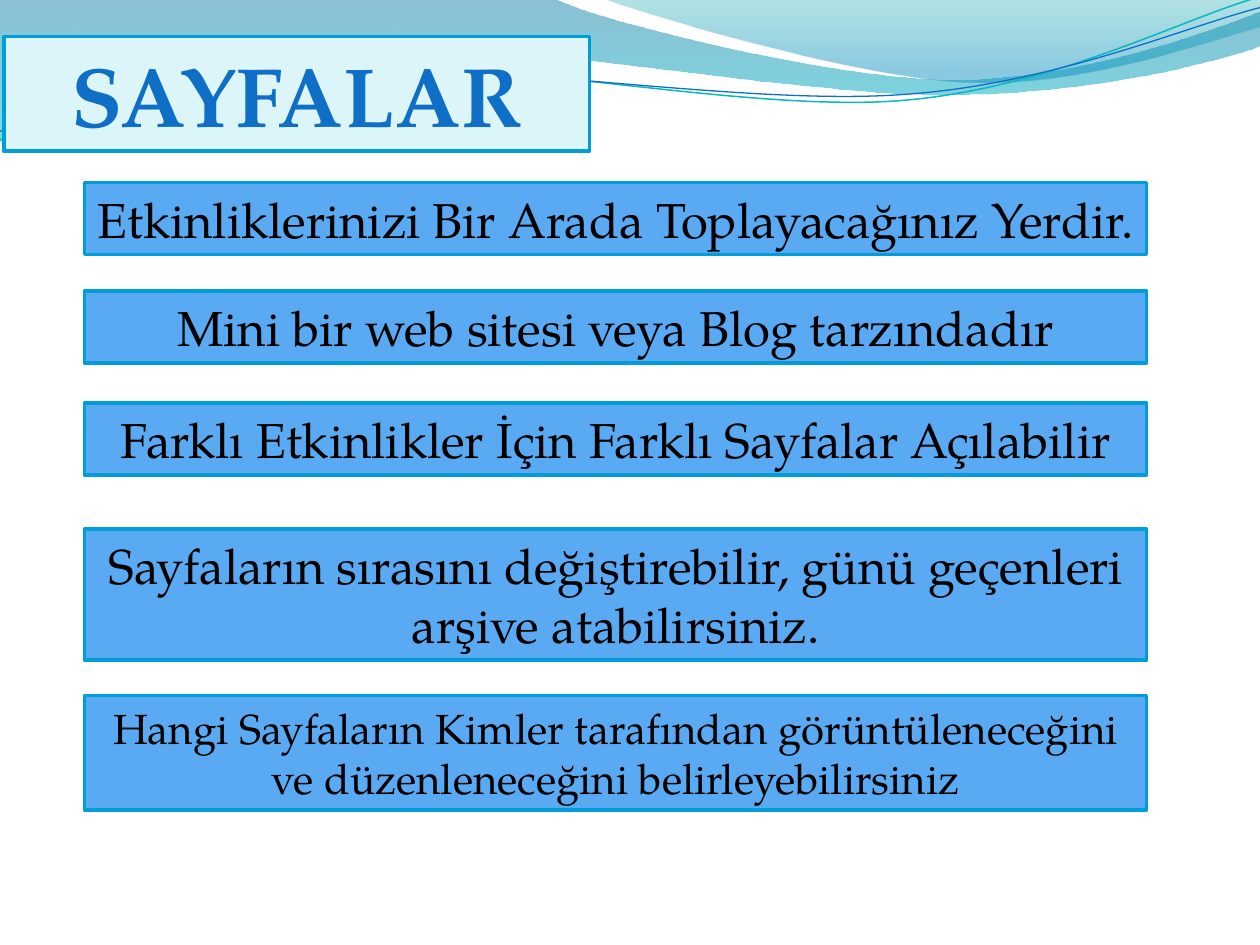
from math import cos, radians, sin

from lxml import etree
from pptx import Presentation
from pptx.dml.color import RGBColor
from pptx.enum.shapes import MSO_SHAPE
from pptx.enum.text import MSO_ANCHOR, MSO_AUTO_SIZE, PP_ALIGN
from pptx.oxml.ns import qn
from pptx.util import Inches, Pt

RECTANGLE = MSO_SHAPE.RECTANGLE
CENTER = PP_ALIGN.CENTER
MIDDLE = MSO_ANCHOR.MIDDLE
FIT_SHAPE = MSO_AUTO_SIZE.SHAPE_TO_FIT_TEXT

FONT_NAME = "TeX Gyre Pagella"
BLACK = RGBColor(0x00, 0x00, 0x00)
BLUE = RGBColor(0x0F, 0x6F, 0xC6)
TEAL = RGBColor(0x0A, 0xB8, 0xBF)
BORDER = RGBColor(0x00, 0x9D, 0xD9)
BAR_FILL = RGBColor(0x59, 0xAA, 0xF2)
TITLE_FILL = RGBColor(0xDB, 0xF5, 0xF9)
WAVE_BLUE = RGBColor(0x00, 0x74, 0xA1)
WAVE_CYAN = RGBColor(0x00, 0xC6, 0xCF)
WAVE_TEAL = RGBColor(0x00, 0xA1, 0xA9)
WAVE_SKY = RGBColor(0x00, 0x8B, 0xBF)
STRAND_TILT = 2.7

presentation = Presentation()
presentation.slide_width = Inches(10)
presentation.slide_height = Inches(7.5)
slide = presentation.slides.add_slide(presentation.slide_layouts[5])


def add_curve(box, segments, tilt=0):
    left, top, width, height = box
    builder = slide.shapes.build_freeform(Inches(left), Inches(top))
    builder.add_line_segments([(Inches(left + width), Inches(top + height))], close=False)
    shape = builder.convert_to_shape()
    shape.shadow.inherit = False
    shape.rotation = -tilt
    center_x, center_y = left + width / 2, top + height / 2
    cosine, sine = cos(radians(tilt)), sin(radians(tilt))
    outline = next(shape._element.iter(qn("a:path")))
    for child in list(outline):
        outline.remove(child)
    for index, segment in enumerate(segments):
        command = "moveTo" if index == 0 else "lnTo" if len(segment) == 2 else "cubicBezTo"
        element = etree.SubElement(outline, qn("a:" + command))
        for x, y in zip(segment[::2], segment[1::2]):
            dx, dy = x - center_x, y - center_y
            local_x = dx * cosine - dy * sine + width / 2
            local_y = dx * sine + dy * cosine + height / 2
            etree.SubElement(element, qn("a:pt"),
                             x=str(Inches(local_x)), y=str(Inches(local_y)))
    return shape, outline


def style_box(shape, text, fill_color, font_color, font_format):
    shape.fill.solid()
    shape.fill.fore_color.rgb = fill_color
    shape.line.color.rgb = BORDER
    shape.line.width = Pt(2)
    frame = shape.text_frame
    frame.text = text
    frame_format = {"word_wrap": True, "auto_size": FIT_SHAPE, "vertical_anchor": MIDDLE}
    for name, value in frame_format.items():
        setattr(frame, name, value)
    paragraph = frame.paragraphs[0]
    paragraph.alignment = CENTER
    font = paragraph.runs[0].font
    font.color.rgb = font_color
    for name, value in {"name": FONT_NAME, **font_format}.items():
        setattr(font, name, value)


waves = [
    ((-0.01, -0.01, 10.02, 1.14),
     [(0, 0), (4.4, -0.01), (4.76, 0.17, 6.64, 0.63, 7.58, 0.63),
      (8.53, 0.63, 9.58, 0.26, 10, 0.09), (10.01, 0.36),
      (9.83, 0.44, 8.7, 0.76, 7.46, 0.75), (6.22, 0.75, 3.82, 0.28, 2.57, 0.34),
      (1.29, 0.36, 0.46, 0.83, -0.01, 1.13), (0, 0)],
     [(0, WAVE_BLUE, 45), (1, WAVE_CYAN, 55)]),
    ((4.79, -0.01, 5.21, 0.7),
     [(4.79, -0.01), (5.09, 0.11, 6.82, 0.62, 7.69, 0.65),
      (8.56, 0.69, 9.61, 0.32, 10, 0.21), (10, 0), (4.79, -0.01)],
     [(0, WAVE_TEAL, 30), (0.8, WAVE_SKY, 45)]),
]
for box, segments, stops in waves:
    wave, outline = add_curve(box, segments)
    etree.SubElement(outline, qn("a:close"))
    wave.line.fill.background()
    wave.fill.gradient()
    wave.fill.gradient_angle = 270
    for stop, (position, color, opacity) in zip(wave.fill.gradient_stops, stops):
        stop.position = position
        stop.color.rgb = color
    colors = wave._element.iter(qn("a:srgbClr"))
    for element, (position, color, opacity) in zip(colors, stops):
        etree.SubElement(element, qn("a:alpha"), val=str(opacity * 1000))

strands = [
    ((-0.02, 0.22, 10.02, 0.71),
     [(0, 1.11), (0.48, 0.93, 1.58, 0.57, 2.77, 0.52),
      (3.95, 0.47, 5.93, 0.89, 7.13, 0.8), (8.33, 0.71, 9.38, 0.15, 9.98, -0.02)],
     TEAL, 0.85),
    ((-0.02, 0.3, 10.03, 0.58),
     [(0, 1.04), (0.47, 0.96, 1.64, 0.61, 2.83, 0.56),
      (4.03, 0.51, 5.97, 0.84, 7.17, 0.75), (8.36, 0.67, 9.41, 0.21, 10, 0.06)],
     BLUE, 0.75),
]
for box, segments, color, width in strands:
    strand, outline = add_curve(box, segments, STRAND_TILT)
    strand.fill.background()
    strand.line.color.rgb = color
    strand.line.width = Pt(width)

title = slide.shapes.title
slide.shapes._spTree.append(title._element)
title_place = {"left": 0.03, "top": 0.29, "width": 4.65, "height": 0.91}
for name, value in title_place.items():
    setattr(title, name, Inches(value))
style_box(title, "SAYFALAR", TITLE_FILL, BLUE, {"size": Pt(48), "bold": True})

bars = [
    (1.45, 0.57, 28, "Etkinliklerinizi Bir Arada Toplayacağınız Yerdir."),
    (2.31, 0.57, 28, "Mini bir web sitesi veya Blog tarzındadır"),
    (5.52, 0.91, 24,
     "Hangi Sayfaların Kimler tarafından görüntüleneceğini ve düzenleneceğini "
     "belirleyebilirsiniz"),
    (3.2, 0.57, 28, "Farklı Etkinlikler İçin Farklı Sayfalar Açılabilir"),
    (4.2, 1.04, 28,
     "Sayfaların sırasını değiştirebilir, günü geçenleri arşive atabilirsiniz."),
]
for top, height, size, text in bars:
    bar = slide.shapes.add_shape(
        RECTANGLE, Inches(0.67), Inches(top), Inches(8.43), Inches(height))
    bar.shadow.inherit = False
    style_box(bar, text, BAR_FILL, BLACK, {"size": Pt(size)})

presentation.save("out.pptx")
